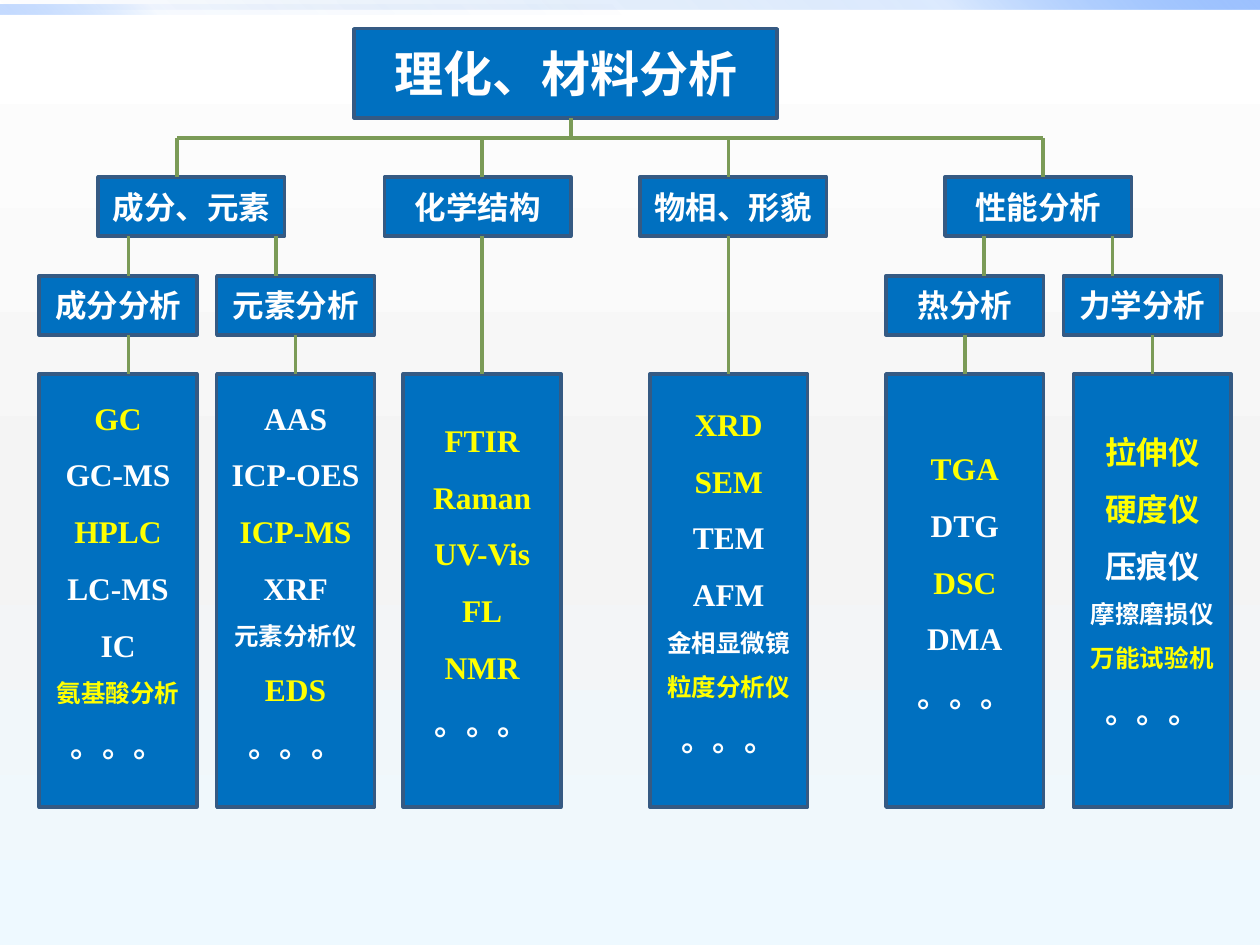
from dataclasses import dataclass

from lxml import etree
from pptx import Presentation
from pptx.dml.color import RGBColor
from pptx.enum.shapes import MSO_CONNECTOR, MSO_SHAPE
from pptx.enum.text import MSO_ANCHOR, PP_ALIGN
from pptx.oxml.ns import qn
from pptx.util import Cm, Pt

BLUE = RGBColor(0x00, 0x70, 0xC0)
BORDER = RGBColor(0x35, 0x5A, 0x83)
GREEN = RGBColor(0x7B, 0x9B, 0x57)
WHITE = RGBColor(0xFF, 0xFF, 0xFF)
YELLOW = RGBColor(0xFF, 0xFF, 0x00)
LIGHT_GREY = RGBColor(0xF4, 0xF4, 0xF4)
ICE = RGBColor(0xEE, 0xF9, 0xFF)
DEEP_BLUE = RGBColor(0x00, 0x58, 0xB7)
MID_BLUE = RGBColor(0x4F, 0x95, 0xFF)
PALE_BLUE = RGBColor(0x9E, 0xC2, 0xFF)

HEADING_WIDTH, COLUMN_WIDTH = 3.76, 3.18
LABEL_HEIGHT, COLUMN_HEIGHT = 1.19, 8.73
# Offsets below the horizontal trunk line
HEADING_TOP, METHOD_TOP, COLUMN_TOP = 0.79, 2.78, 4.76

HIGHLIGHTED = {
    "GC", "HPLC", "氨基酸分析", "ICP-MS", "EDS", "FTIR", "Raman", "UV-Vis", "FL", "NMR",
    "XRD", "SEM", "粒度分析仪", "TGA", "DSC", "拉伸仪", "硬度仪", "万能试验机",
}
SMALL = {"氨基酸分析", "元素分析仪", "金相显微镜", "粒度分析仪", "摩擦磨损仪", "万能试验机"}


@dataclass
class Box:
    left: float
    top: float
    width: float
    height: float

    def lengths(self):
        return Cm(self.left), Cm(self.top), Cm(self.width), Cm(self.height)


@dataclass
class Column:
    """Horizontal offsets within a branch; method is the optional label above."""
    left: float
    stem: float
    instruments: list
    method: str = ""
    method_left: float = 0
    method_stem: float = 0


@dataclass
class Branch:
    left: float
    heading: str
    heading_left: float
    stem: float
    columns: list


BRANCHES = [
    Branch(0.79, "成分、元素", 1.19, 2.78, [
        Column(0, 1.8, ["GC", "GC-MS", "HPLC", "LC-MS", "IC", "氨基酸分析"],
               "成分分析", 0, 1.8),
        Column(3.58, 5.17, ["AAS", "ICP-OES", "ICP-MS", "XRF", "元素分析仪", "EDS"],
               "元素分析", 3.58, 4.77),
    ]),
    Branch(7.75, "化学结构", 0, 1.97, [
        Column(0.38, 1.97, ["FTIR", "Raman", "UV-Vis", "FL", "NMR"]),
    ]),
    Branch(12.9, "物相、形貌", 0, 1.79, [
        Column(0.2, 1.79, ["XRD", "SEM", "TEM", "AFM", "金相显微镜", "粒度分析仪"]),
    ]),
    Branch(17.86, "性能分析", 1.19, 3.17, [
        Column(0, 1.59, ["TGA", "DTG", "DSC", "DMA"], "热分析", 0, 1.98),
        Column(3.78, 5.37, ["拉伸仪", "硬度仪", "压痕仪", "摩擦磨损仪", "万能试验机"],
               "力学分析", 3.58, 4.57),
    ]),
]


def set_gradient(fill, owner, angle, stops):
    """Fill with (position %, colour, opacity %) stops; angle runs clockwise."""
    fill.gradient()
    fill.gradient_angle = (360 - angle) % 360
    stop_list = owner.find(".//" + qn("a:gsLst"))
    for old_stop in list(stop_list):
        stop_list.remove(old_stop)
    for position, color, opacity in stops:
        stop = etree.SubElement(stop_list, qn("a:gs"), pos=str(position * 1000))
        color_element = etree.SubElement(stop, qn("a:srgbClr"), val=str(color))
        if opacity < 100:
            etree.SubElement(color_element, qn("a:alpha"), val=str(opacity * 1000))


def add_rectangle(slide, box):
    shape = slide.shapes.add_shape(MSO_SHAPE.RECTANGLE, *box.lengths())
    shape.shadow.inherit = False
    return shape


def add_gradient_bar(slide, box, angle, mid_opacity, end_opacity):
    bar = add_rectangle(slide, box)
    bar.line.fill.background()
    set_gradient(bar.fill, bar.element, angle, [
        (0, DEEP_BLUE, 0), (75, MID_BLUE, mid_opacity), (100, PALE_BLUE, end_opacity)])


def add_panel(slide, box):
    panel = add_rectangle(slide, box)
    panel.fill.solid()
    panel.fill.fore_color.rgb = BLUE
    panel.line.color.rgb = BORDER
    panel.line.width = Pt(2)
    panel.text_frame.vertical_anchor = MSO_ANCHOR.MIDDLE
    return panel


def write_line(paragraph, text, size, font_name, color=WHITE):
    paragraph.text = text
    paragraph.alignment = PP_ALIGN.CENTER
    font = paragraph.font
    font.size, font.name, font.bold = Pt(size), font_name, True
    font.color.rgb = color


def add_label(slide, box, text, size=18):
    label = add_panel(slide, box)
    write_line(label.text_frame.paragraphs[0], text, size, "Cambria")
    return label


def add_instrument_list(slide, box, instruments):
    panel = add_panel(slide, box)
    frame = panel.text_frame
    frame.margin_bottom = Cm(0.87)
    for index, name in enumerate([*instruments, "。。。"]):
        paragraph = frame.add_paragraph() if index else frame.paragraphs[0]
        write_line(paragraph, name, 14 if name in SMALL else 18, "Times New Roman",
                   YELLOW if name in HIGHLIGHTED else WHITE)
        paragraph.line_spacing = 1.5
    return panel


def add_line(slide, x1, y1, x2, y2):
    line = slide.shapes.add_connector(
        MSO_CONNECTOR.STRAIGHT, Cm(x1), Cm(y1), Cm(x2), Cm(y2))
    line.line.color.rgb = GREEN
    line.line.width = Pt(2)
    etree.SubElement(line.element.spPr, qn("a:effectLst"))
    return line


def add_stem(slide, x, top, bottom, upper=None, lower=None):
    """Vertical line, joined to each neighbour whose centre it meets."""
    stem = add_line(slide, x, top, x, bottom)
    for shape, side, join in ((upper, 2, stem.begin_connect), (lower, 0, stem.end_connect)):
        if shape and abs(shape.left + shape.width / 2 - Cm(x)) < Cm(0.03):
            join(shape, side)


def draw_branch(slide, left, top, branch):
    heading_top, method_top, column_top = (
        top + offset for offset in (HEADING_TOP, METHOD_TOP, COLUMN_TOP))
    heading = add_label(slide, Box(left + branch.heading_left, heading_top,
                                   HEADING_WIDTH, LABEL_HEIGHT), branch.heading)
    add_stem(slide, left + branch.stem, top, heading_top, lower=heading)
    for column in branch.columns:
        panel = add_instrument_list(slide, Box(left + column.left, column_top,
                                               COLUMN_WIDTH, COLUMN_HEIGHT), column.instruments)
        upper, upper_bottom = heading, heading_top + LABEL_HEIGHT
        if column.method:
            method = add_label(slide, Box(left + column.method_left, method_top,
                                          COLUMN_WIDTH, LABEL_HEIGHT), column.method)
            add_stem(slide, left + column.method_stem, upper_bottom, method_top, heading, method)
            upper, upper_bottom = method, method_top + LABEL_HEIGHT
        add_stem(slide, left + column.stem, upper_bottom, column_top, upper, panel)


def draw_root(slide, box, trunk_top):
    root = add_label(slide, box, "理化、材料分析", 28)
    add_stem(slide, box.left + 4.37, box.top + box.height, trunk_top, upper=root)
    first, last = BRANCHES[0], BRANCHES[-1]
    add_line(slide, first.left + first.stem, trunk_top, last.left + last.stem, trunk_top)


def draw_backdrop(slide, box):
    set_gradient(slide.background.fill, slide.element, 90, [
        (0, WHITE, 100), (55, LIGHT_GREY, 100), (100, ICE, 100)])
    add_gradient_bar(slide, Box(box.left, box.top, box.width, 0.2), 315, 20, 100)
    add_gradient_bar(slide, Box(box.left, box.top + 0.1, box.width / 2, 0.2), 135, 5, 60)


def main():
    presentation = Presentation()
    presentation.slide_width, presentation.slide_height = Cm(25.4), Cm(19.05)
    slide = presentation.slides.add_slide(presentation.slide_layouts[6])
    trunk_top = 2.78
    draw_backdrop(slide, Box(0, 0, 25.4, 19.05))
    draw_root(slide, Box(7.14, 0.58, 8.53, 1.8), trunk_top)
    for branch in BRANCHES:
        draw_branch(slide, branch.left, trunk_top, branch)
    presentation.save("out.pptx")


if __name__ == "__main__":
    main()
